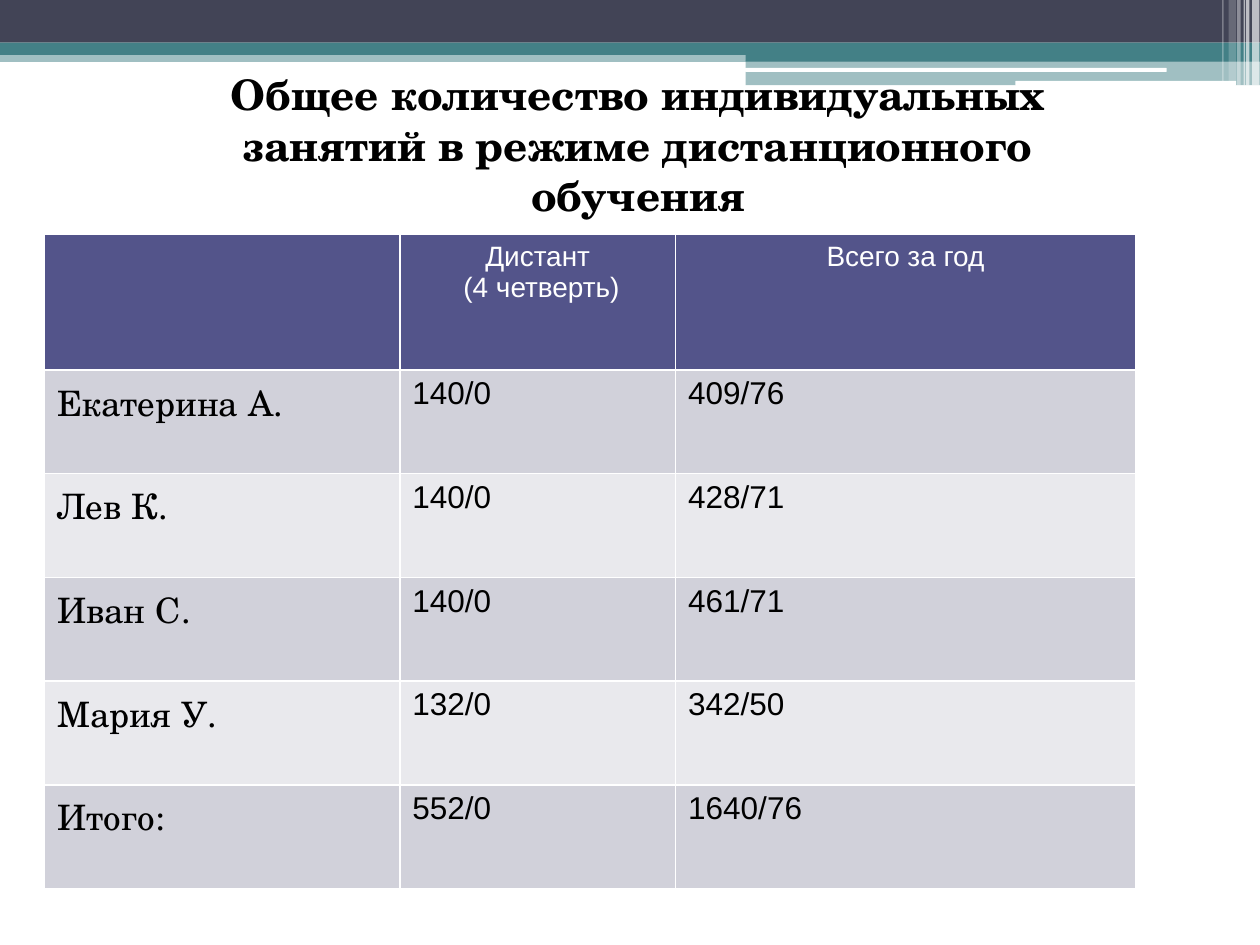
"""Build the slide with the yearly table of individual distance lessons."""
import pptx
import pptx.dml.color
import pptx.enum.shapes
import pptx.enum.text
import pptx.oxml.ns
import pptx.util
from lxml import etree

Cm = pptx.util.Cm
SHAPES = pptx.enum.shapes.MSO_SHAPE
ALIGN = pptx.enum.text.PP_ALIGN

TEAL, DARK, WHITE, BLACK = "438086", "424456", "FFFFFF", "000000"
HEADER_FILL = "53548A"
BAND_FILLS = ["D1D1DA", "E9E9ED"]

BARS = [
    (0, 1.02, 25.4, 0.23, TEAL, 50),
    (0, 0, 25.4, 0.86, DARK, 100),
    (0, 0.86, 25.4, 0.25, TEAL, 100),
    (15.03, 1, 10.37, 0.24, TEAL, 100),
    (15.03, 1.22, 10.37, 0.5, TEAL, 50),
]
ROUNDED_BARS = [
    (15.02, 1.37, 8.5, 0.08, WHITE, 100),
    (20.47, 1.63, 4.45, 0.1, WHITE, 100),
]
STRIPES = [
    (25.24, 0.15, 1.73, 65),
    (25.12, 0.07, 1.73, 65),
    (25.07, 0.03, 1.73, 60),
    (24.94, 0.07, 1.73, 40),
    (24.77, 0.15, 1.63, 20),
    (24.64, 0.03, 1.63, 30),
]

TITLE = "Общее количество индивидуальных занятий в режиме дистанционного обучения"
ROWS = [
    ["", "Дистант\n (4 четверть)", "Всего за год"],
    ["Екатерина А.", "140/0", "409/76"],
    ["Лев К.", "140/0", "428/71"],
    ["Иван С.", "140/0", "461/71"],
    ["Мария У.", "132/0", "342/50"],
    ["Итого:", "552/0", "1640/76"],
]
COLUMN_WIDTHS = [7.16, 5.56, 9.27]
HEADER_HEIGHT, ROW_HEIGHT = 2.73, 2.09


def color(value):
    """Turn a hex string into a color."""
    return pptx.dml.color.RGBColor.from_string(value)


class SlideBuilder:
    """Hold the text styles and the current slide."""

    styles = {
        "title": {"name": "TeX Gyre Schola", "size": pptx.util.Pt(24), "bold": True},
        "header": {"name": "Arial", "size": pptx.util.Pt(16), "bold": False},
        "name": {"name": "TeX Gyre Schola", "size": pptx.util.Pt(20), "bold": False},
        "value": {"name": "Arial", "size": pptx.util.Pt(18), "bold": False},
    }

    def __init__(self, slide):
        """Keep the slide to draw on."""
        self.slide = slide

    def text(self, frame, content, style, text_color, alignment):
        """Write formatted paragraphs into a text frame."""
        frame.text = content
        for paragraph in frame.paragraphs:
            paragraph.alignment = alignment
            for attribute, value in self.styles[style].items():
                setattr(paragraph.font, attribute, value)
            paragraph.font.color.rgb = color(text_color)

    def bar(self, left, top, width, height, fill, opacity, kind=SHAPES.RECTANGLE):
        """Add a borderless bar with the given opacity in percent."""
        shape = self.slide.shapes.add_shape(kind, Cm(left), Cm(top), Cm(width), Cm(height))
        shape.shadow.inherit = False
        shape.line.fill.background()
        shape.fill.solid()
        shape.fill.fore_color.rgb = color(fill)
        if opacity < 100:
            tag = pptx.oxml.ns.qn("a:srgbClr")
            fill_element = next(shape.element.spPr.iter(tag))
            alpha = etree.SubElement(fill_element, pptx.oxml.ns.qn("a:alpha"))
            alpha.set("val", str(opacity * 1000))

    def title(self, content, left, top, width, height):
        """Place the title in front of the bars."""
        shape = self.slide.shapes.title
        frame_values = {
            "word_wrap": True,
            "auto_size": pptx.enum.text.MSO_AUTO_SIZE.NONE,
            "vertical_anchor": pptx.enum.text.MSO_ANCHOR.MIDDLE,
        }
        box = {"left": left, "top": top, "width": width, "height": height}
        for attribute, value in box.items():
            setattr(shape, attribute, Cm(value))
        for attribute, value in frame_values.items():
            setattr(shape.text_frame, attribute, value)
        self.text(shape.text_frame, content, "title", BLACK, ALIGN.CENTER)
        self.slide.shapes.element.append(shape.element)

    def table(self, rows, left, top):
        """Add the table with a header and banded rows."""
        heights = [HEADER_HEIGHT] + [ROW_HEIGHT] * (len(rows) - 1)
        table = self.slide.shapes.add_table(
            len(rows), len(COLUMN_WIDTHS), Cm(left), Cm(top),
            Cm(sum(COLUMN_WIDTHS)), Cm(sum(heights))).table
        for column, width in zip(table.columns, COLUMN_WIDTHS):
            column.width = Cm(width)
        for row_index, values in enumerate(rows):
            table.rows[row_index].height = Cm(heights[row_index])
            for column_index, content in enumerate(values):
                cell = table.cell(row_index, column_index)
                cell.fill.solid()
                if row_index == 0:
                    fill, style, text_color, alignment = HEADER_FILL, "header", WHITE, ALIGN.CENTER
                else:
                    fill = BAND_FILLS[(row_index - 1) % 2]
                    style = "value" if column_index else "name"
                    text_color, alignment = BLACK, ALIGN.LEFT
                cell.fill.fore_color.rgb = color(fill)
                self.text(cell.text_frame, content, style, text_color, alignment)


def main():
    """Build and save the presentation."""
    presentation = pptx.Presentation()
    presentation.slide_width, presentation.slide_height = Cm(25.4), Cm(19.05)
    builder = SlideBuilder(presentation.slides.add_slide(presentation.slide_layouts[5]))
    for bar in BARS:
        builder.bar(*bar)
    for bar in ROUNDED_BARS:
        builder.bar(*bar, kind=SHAPES.ROUNDED_RECTANGLE)
    for left, width, height, opacity in STRIPES:
        builder.bar(left, 0, width, height, WHITE, opacity)
    builder.title(TITLE, 2.49, 1.32, 20.75, 3.18)
    builder.table(ROWS, 0.9, 4.73)
    presentation.save("out.pptx")


if __name__ == "__main__":
    main()
